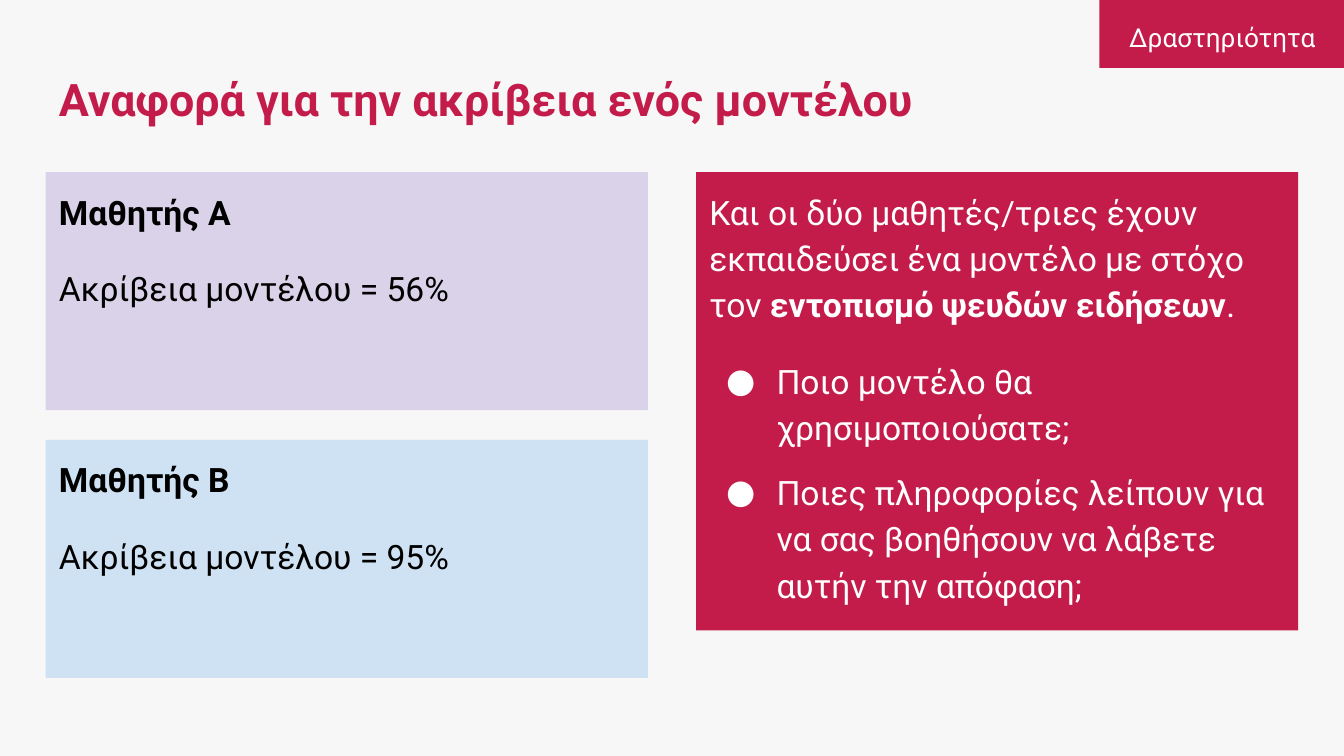
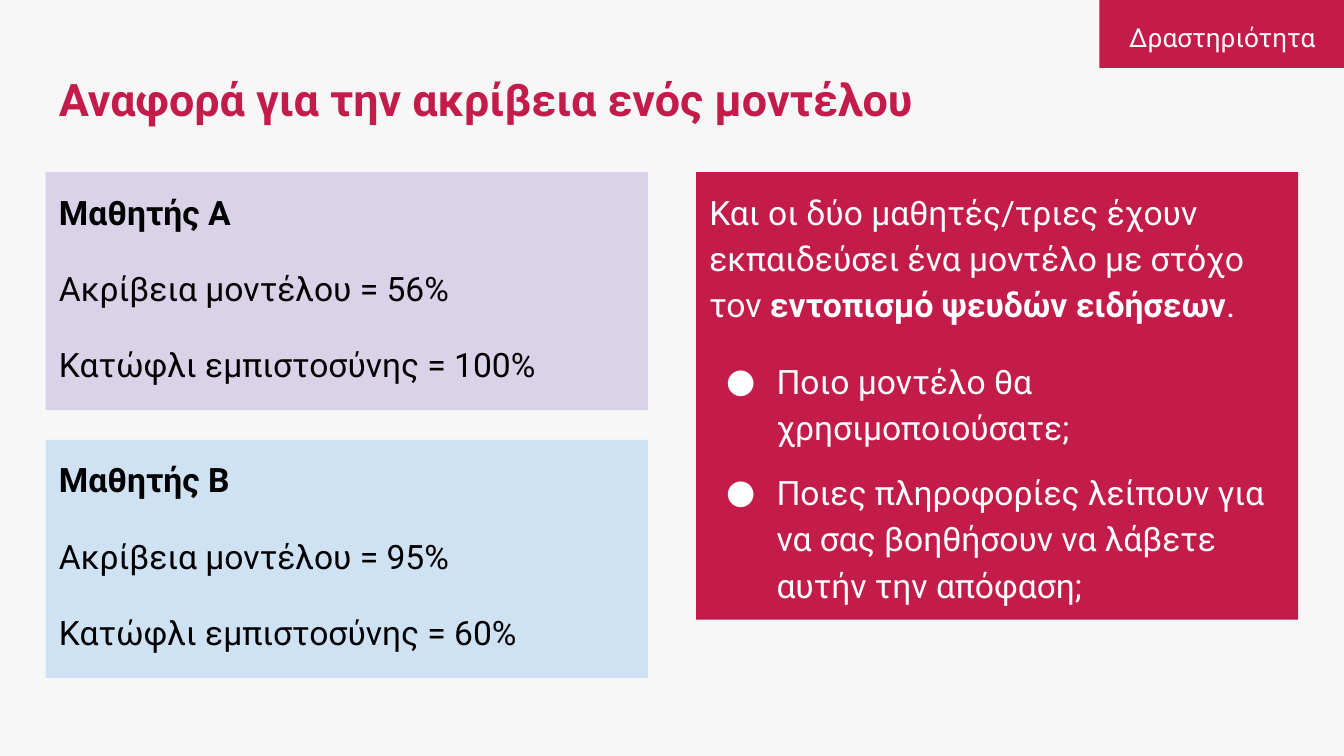
from lxml import etree
from pptx import Presentation
from pptx.dml.color import RGBColor
from pptx.enum.shapes import MSO_SHAPE
from pptx.enum.text import MSO_ANCHOR, PP_ALIGN
from pptx.oxml.ns import qn
from pptx.util import Pt

RECTANGLE = MSO_SHAPE.RECTANGLE
TOP, MIDDLE = MSO_ANCHOR.TOP, MSO_ANCHOR.MIDDLE
LEFT, CENTER = PP_ALIGN.LEFT, PP_ALIGN.CENTER

BACKGROUND = RGBColor(0xF7, 0xF7, 0xF7)
CRIMSON = RGBColor(0xC3, 0x1C, 0x4A)
LILAC = RGBColor(0xD9, 0xD2, 0xE9)
PALE_BLUE = RGBColor(0xCF, 0xE2, 0xF3)
BLACK = RGBColor(0, 0, 0)
WHITE = RGBColor(0xFF, 0xFF, 0xFF)
FONT = "Roboto"

TITLE = "Αναφορά για την ακρίβεια ενός μοντέλου"
TAG = "Δραστηριότητα"
TASK = [
    ("Και οι δύο μαθητές/τριες έχουν εκπαιδεύσει ένα μοντέλο με στόχο τον ", False),
    ("εντοπισμό ψευδών ειδήσεων", True),
    (".", False),
]
QUESTIONS = [
    "Ποιο μοντέλο θα χρησιμοποιούσατε;",
    "Ποιες πληροφορίες λείπουν για να σας βοηθήσουν να λάβετε αυτήν την απόφαση;",
]
STUDENTS = [
    ("Μαθητής Α", LILAC, "Ακρίβεια μοντέλου = 56%", "Κατώφλι εμπιστοσύνης = 100%"),
    ("Μαθητής Β", PALE_BLUE, "Ακρίβεια μοντέλου = 95%", "Κατώφλι εμπιστοσύνης = 60%"),
]
# (facts shown for each student, height of the task panel)
SLIDES = [(1, 245.5), (2, 239.8)]

SLIDE_WIDTH, SLIDE_HEIGHT = 720, 405
MARGIN = 24.5
CONTENT_WIDTH = SLIDE_WIDTH - 2 * MARGIN
CARD_WIDTH, CARD_HEIGHT, CARD_GAP = 322.6, 127.5, 16
CARD_TOP = 92.2
TASK_LEFT = SLIDE_WIDTH - MARGIN - CARD_WIDTH
TAG_BAND = (589, 0, 131, 36.4)
TAG_TEXT = (594, 2, 121.7, 30.2)
INSET = 7.2


def add_box(slide, bounds, fill=None, anchor=TOP):
    bounds = [Pt(length) for length in bounds]
    if fill is None:
        shape = slide.shapes.add_textbox(*bounds)
    else:
        shape = slide.shapes.add_shape(RECTANGLE, *bounds)
        shape.shadow.inherit = False
        shape.fill.solid()
        shape.fill.fore_color.rgb = fill
        shape.line.fill.background()
    frame = shape.text_frame
    frame.word_wrap = True
    frame.vertical_anchor = anchor
    frame.margin_left = frame.margin_right = Pt(INSET)
    frame.margin_top = frame.margin_bottom = Pt(INSET)
    return frame


def write(paragraph, runs, color, size=18, space_before=0, spacing=1.15, align=LEFT):
    """Fill a paragraph with (text, bold) runs."""
    paragraph.alignment = align
    paragraph.line_spacing = spacing
    paragraph.space_before = Pt(space_before)
    for text, bold in runs:
        run = paragraph.add_run()
        run.text = text
        run.font.name = FONT
        run.font.size = Pt(size)
        run.font.bold = bold
        run.font.color.rgb = color


def add_bullet(paragraph):
    properties = paragraph._p.get_or_add_pPr()
    properties.set("marL", str(Pt(36)))
    properties.set("indent", str(-Pt(27)))
    bullet_color = etree.SubElement(properties, qn("a:buClr"))
    etree.SubElement(bullet_color, qn("a:srgbClr"), val=str(WHITE))
    etree.SubElement(properties, qn("a:buFont"), typeface=FONT)
    etree.SubElement(properties, qn("a:buChar"), char="●")


def add_header(slide):
    slide.background.fill.solid()
    slide.background.fill.fore_color.rgb = BACKGROUND
    add_box(slide, TAG_BAND, CRIMSON)
    title = add_box(slide, (MARGIN, 25.2, CONTENT_WIDTH, 55), anchor=MIDDLE)
    write(title.paragraphs[0], [(TITLE, True)], CRIMSON, size=24, spacing=1.0)
    tag = add_box(slide, TAG_TEXT)
    write(tag.paragraphs[0], [(TAG, False)], WHITE, size=14, align=CENTER)


def add_student_cards(slide, fact_count):
    for index, (name, fill, *facts) in enumerate(STUDENTS):
        top = CARD_TOP + index * (CARD_HEIGHT + CARD_GAP)
        card = add_box(slide, (MARGIN, top, CARD_WIDTH, CARD_HEIGHT), fill)
        write(card.paragraphs[0], [(name, True)], BLACK)
        for fact in facts[:fact_count]:
            write(card.add_paragraph(), [(fact, False)], BLACK, space_before=16)


def add_task_panel(slide, height):
    panel = add_box(slide, (TASK_LEFT, CARD_TOP, CARD_WIDTH, height), CRIMSON)
    write(panel.paragraphs[0], TASK, WHITE)
    for question, space_before in zip(QUESTIONS, (16, 10)):
        paragraph = panel.add_paragraph()
        write(paragraph, [(question, False)], WHITE, space_before=space_before)
        add_bullet(paragraph)


def main():
    presentation = Presentation()
    presentation.slide_width = Pt(SLIDE_WIDTH)
    presentation.slide_height = Pt(SLIDE_HEIGHT)
    for fact_count, panel_height in SLIDES:
        slide = presentation.slides.add_slide(presentation.slide_layouts[6])
        add_header(slide)
        add_student_cards(slide, fact_count)
        add_task_panel(slide, panel_height)
    presentation.save("out.pptx")


if __name__ == "__main__":
    main()
